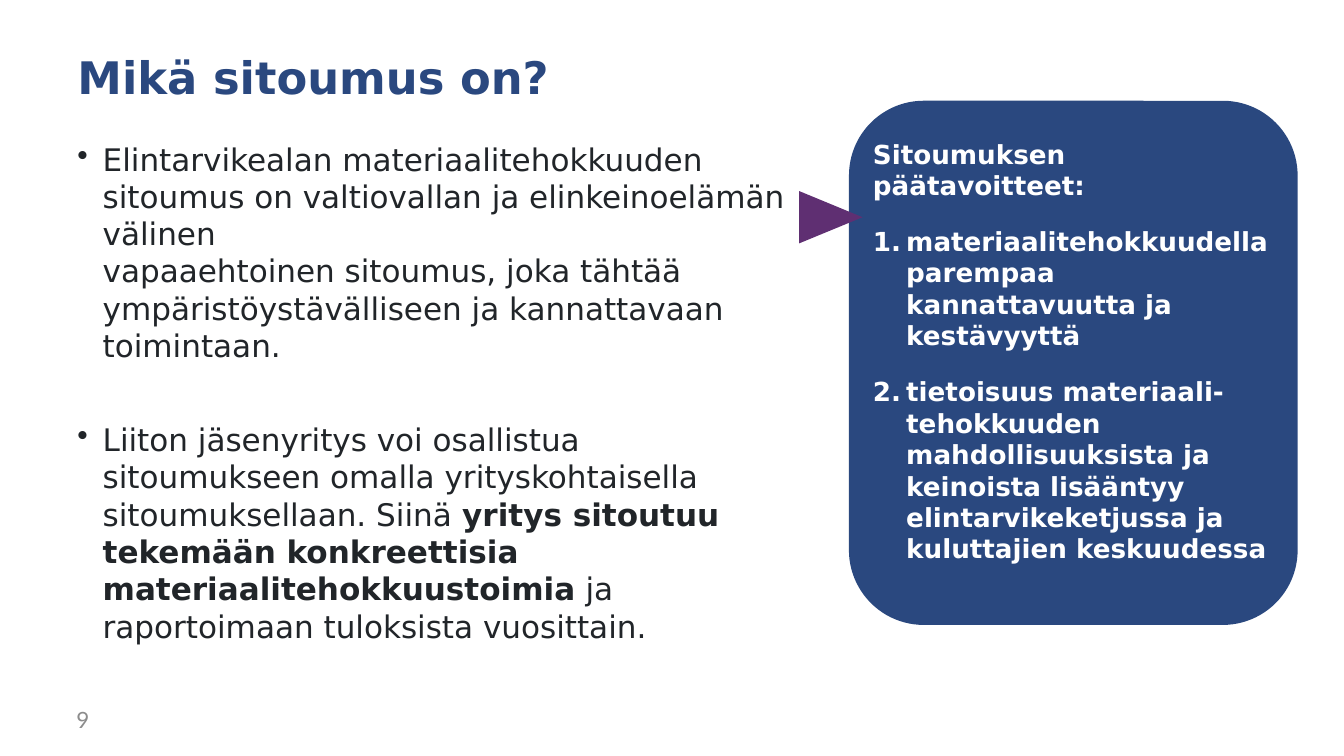
from dataclasses import dataclass

from lxml import etree
from pptx import Presentation
from pptx import util as u
from pptx.dml.color import RGBColor
from pptx.enum import shapes, text
from pptx.oxml import ns

WIDTH, HEIGHT = 13.33, 7.5
COLORS = {"navy": "2A487F", "ink": "212529", "white": "FFFFFF",
          "grey": "8C8C8C", "purple": "5F2F72"}


@dataclass(frozen=True)
class Area:
    left: float
    top: float
    width: float
    height: float

    def emu(self) -> tuple[int, int, int, int]:
        return (u.Inches(self.left * WIDTH), u.Inches(self.top * HEIGHT),
                u.Inches(self.width * WIDTH), u.Inches(self.height * HEIGHT))


@dataclass(frozen=True)
class Paragraph:
    phrases: tuple[str, ...]
    bullet: str = ""
    indent: float = 0
    before: float = 0


@dataclass(frozen=True)
class TextBlock:
    area: Area
    paragraphs: tuple[Paragraph, ...]
    size: float
    color: str
    bold: bool = False
    font: str = "DejaVu Sans"
    anchor: text.MSO_ANCHOR = text.MSO_ANCHOR.TOP


@dataclass(frozen=True)
class Figure:
    kind: shapes.MSO_SHAPE
    area: Area
    color: str
    rotation: float = 0


FIGURES = (
    Figure(shapes.MSO_SHAPE.ROUNDED_RECTANGLE,
           Area(8.42 / WIDTH, 1 / HEIGHT, 4.45 / WIDTH, 5.2 / HEIGHT), "navy"),
    Figure(shapes.MSO_SHAPE.FLOWCHART_MERGE,
           Area(7.98 / WIDTH, 1.84 / HEIGHT, 0.52 / WIDTH, 0.63 / HEIGHT), "purple", 270),
)

BLOCKS = (
    TextBlock(Area(0.67 / WIDTH, 0.44 / HEIGHT, 12 / WIDTH, 0.12),
              (Paragraph(("Mikä sitoumus on?",)),), 32, "navy", True),
    TextBlock(Area(0.67 / WIDTH, 1.34 / HEIGHT, 7.35 / WIDTH, 5.2 / HEIGHT), (
        Paragraph(("Elintarvikealan materiaalitehokkuuden sitoumus on valtiovallan "
                   "ja elinkeinoelämän välinen \vvapaaehtoinen sitoumus, joka tähtää "
                   "ympäristöystävälliseen ja kannattavaan toimintaan.",), "•", 0.25),
        Paragraph(("Liiton jäsenyritys voi osallistua sitoumukseen omalla "
                   "yrityskohtaisella sitoumuksellaan. Siinä ",
                   "yritys sitoutuu tekemään konkreettisia materiaalitehokkuustoimia",
                   " ja raportoimaan tuloksista vuosittain."), "•", 0.25, 40.5),
    ), 22.2, "ink"),
    TextBlock(Area(8.56 / WIDTH, 1.32 / HEIGHT, 4.25 / WIDTH, 0.54), (
        Paragraph(("Sitoumuksen päätavoitteet:",)),
        Paragraph(("materiaalitehokkuudella parempaa kannattavuutta ja kestävyyttä",),
                  "1.", 0.33, 17.5),
        Paragraph(("tietoisuus materiaali-tehokkuuden mahdollisuuksista ja keinoista "
                   "lisääntyy elintarvikeketjussa ja kuluttajien keskuudessa",),
                  "1.", 0.33, 17.5),
    ), 18.7, "white", True),
    TextBlock(Area(0.66 / WIDTH, 6.94 / HEIGHT, 3.11 / WIDTH, 0.4 / HEIGHT),
              (Paragraph(("9",)),), 16, "grey", font="Lato",
              anchor=text.MSO_ANCHOR.MIDDLE),
)


def add_bullet(line, bullet: str, indent: float) -> None:
    properties = line._p.get_or_add_pPr()
    properties.set("marL", str(u.Inches(indent)))
    properties.set("indent", str(-u.Inches(indent)))
    if bullet == "1.":
        etree.SubElement(properties, ns.qn("a:buAutoNum"), type="arabicPeriod")
    else:
        etree.SubElement(properties, ns.qn("a:buChar"), char=bullet)


def draw_figure(slide, figure: Figure) -> None:
    drawn = slide.shapes.add_shape(figure.kind, *figure.area.emu())
    drawn.rotation = figure.rotation
    drawn.shadow.inherit = False
    drawn.fill.solid()
    drawn.fill.fore_color.rgb = RGBColor.from_string(COLORS[figure.color])
    drawn.line.fill.background()


def draw_text(slide, block: TextBlock) -> None:
    frame = slide.shapes.add_textbox(*block.area.emu()).text_frame
    frame.word_wrap = True
    frame.vertical_anchor = block.anchor
    for index, paragraph in enumerate(block.paragraphs):
        line = frame.add_paragraph() if index else frame.paragraphs[0]
        if paragraph.before:
            line.space_before = u.Pt(paragraph.before)
        if paragraph.bullet:
            add_bullet(line, paragraph.bullet, paragraph.indent)
        line.font.name = block.font
        line.font.size = u.Pt(block.size)
        line.font.color.rgb = RGBColor.from_string(COLORS[block.color])
        if len(paragraph.phrases) == 1:
            line.font.bold = block.bold
            line.text = paragraph.phrases[0]
            continue
        for position, phrase in enumerate(paragraph.phrases):
            run = line.add_run()
            run.text = phrase
            run.font.bold = position % 2 == 1


def main() -> None:
    deck = Presentation()
    deck.slide_width, deck.slide_height = u.Inches(WIDTH), u.Inches(HEIGHT)
    slide = deck.slides.add_slide(deck.slide_layouts[6])
    for figure in FIGURES:
        draw_figure(slide, figure)
    for block in BLOCKS:
        draw_text(slide, block)
    deck.save("out.pptx")


if __name__ == "__main__":
    main()
